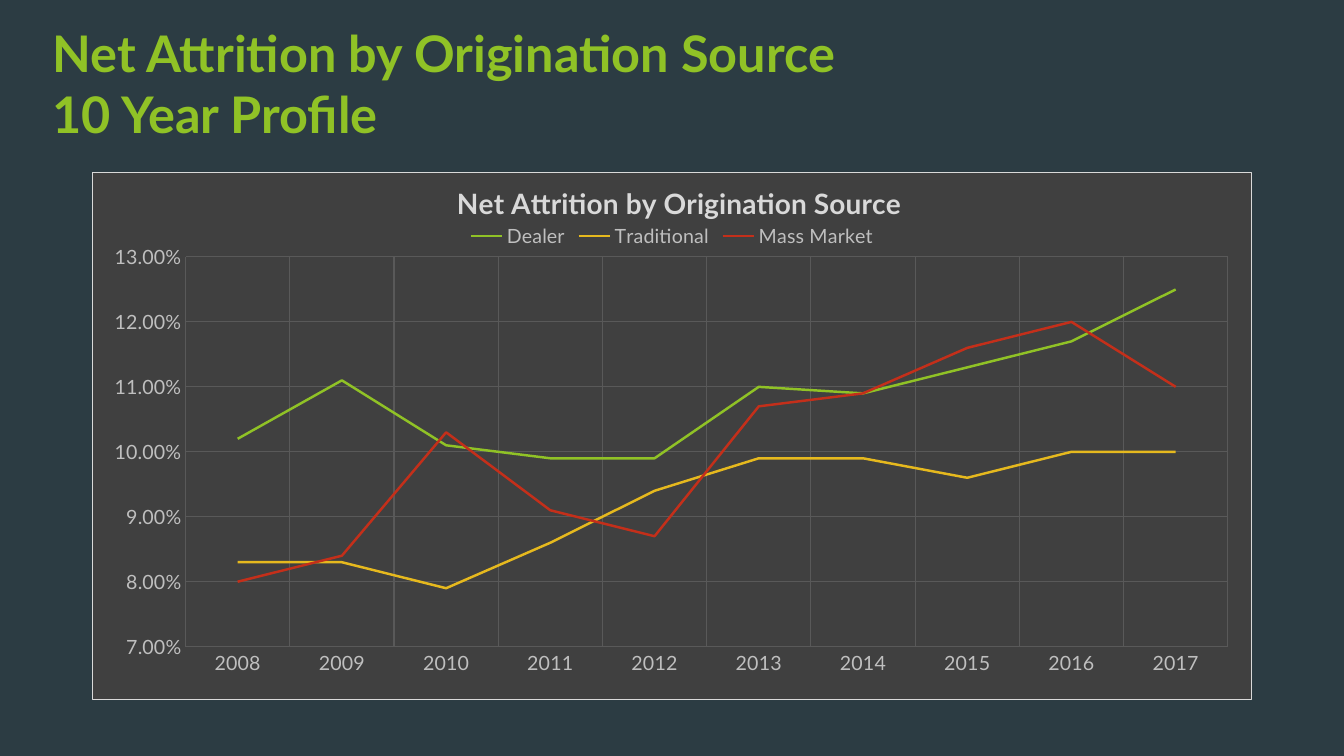
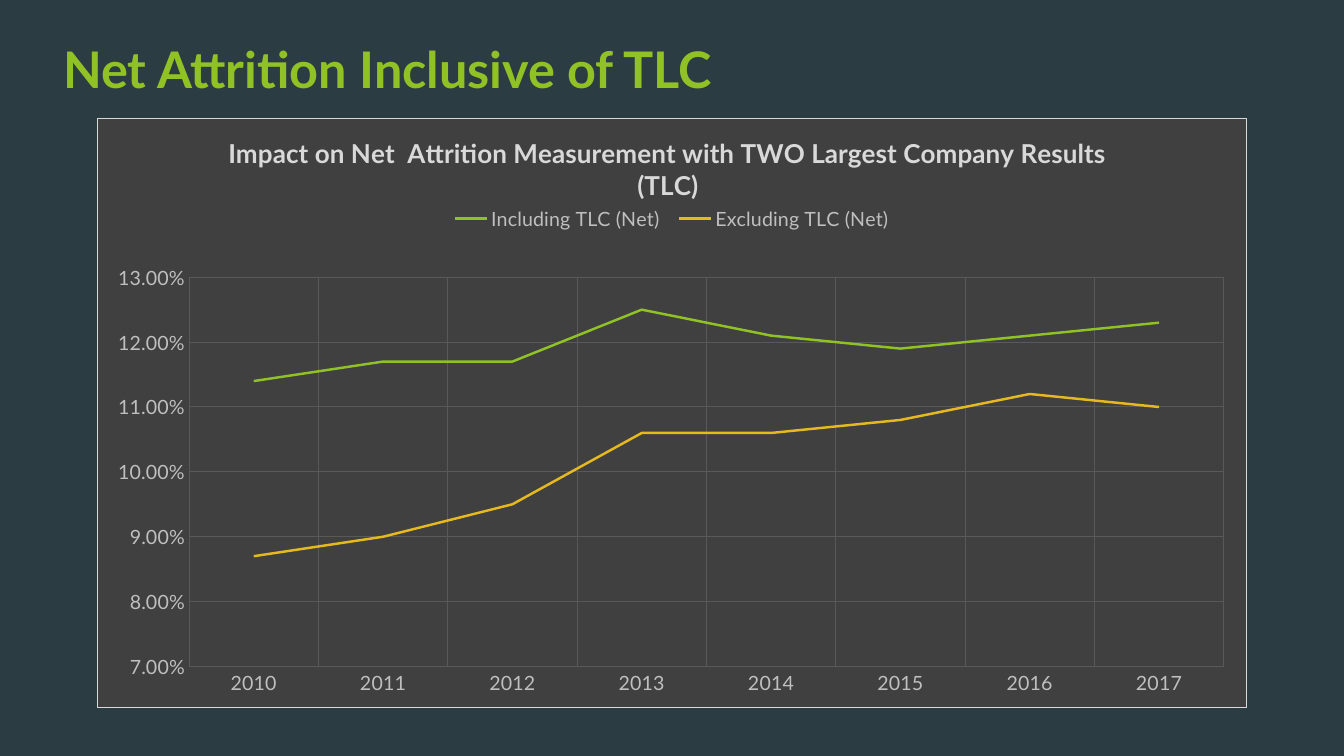
from lxml import etree
from pptx import Presentation
from pptx.chart.data import CategoryChartData
from pptx.dml.color import RGBColor
from pptx.enum.chart import (XL_CHART_TYPE, XL_LEGEND_POSITION, XL_MARKER_STYLE,
                             XL_TICK_MARK)
from pptx.enum.text import MSO_ANCHOR
from pptx.oxml import parse_xml
from pptx.oxml.ns import nsdecls, qn
from pptx.util import Pt

LINE_CHART = XL_CHART_TYPE.LINE
LEGEND_TOP = XL_LEGEND_POSITION.TOP
NO_MARKER = XL_MARKER_STYLE.NONE
NO_TICK = XL_TICK_MARK.NONE
ANCHOR_TOP = MSO_ANCHOR.TOP
FONT = "Lato"
COLORS = {
    "background": "2C3C43",
    "panel": "404040",
    "border": "D9D9D9",
    "grid": "595959",
    "label": "BFBFBF",
    "green": "90C226",
    "yellow": "E6B91E",
    "red": "C42F1A",
}
SERIES_COLORS = ("green", "yellow", "red")


def color(name):
    """Return the named colour."""
    return RGBColor.from_string(COLORS[name])


def style_font(font, size, color_name, bold=False):
    """Set the typeface, size, colour and weight of a font."""
    font.name = FONT
    font.size = Pt(size)
    font.bold = bold
    font.color.rgb = color(color_name)


def add_slide(presentation):
    """Add a blank slide with the shared background."""
    slide = presentation.slides.add_slide(presentation.slide_layouts[6])
    slide.background.fill.solid()
    slide.background.fill.fore_color.rgb = color("background")
    return slide


def add_title(slide, lines, box):
    """Add the slide title, one run for each line."""
    frame = slide.shapes.add_textbox(*map(Pt, box)).text_frame
    frame.word_wrap = True
    frame.vertical_anchor = ANCHOR_TOP
    paragraph = frame.paragraphs[0]
    for index, line in enumerate(lines):
        if index:
            paragraph.add_line_break()
        run = paragraph.add_run()
        run.text = line
        style_font(run.font, 36, "green", True)


def set_layout(element, index, fractions, inner=False):
    """Place a chart part by fractions of the chart area."""
    for old in element.findall(qn("c:layout")):
        element.remove(old)
    layout = etree.Element(qn("c:layout"))
    manual = etree.SubElement(layout, qn("c:manualLayout"))
    settings = [("layoutTarget", "inner")] if inner else []
    settings += [("xMode", "edge"), ("yMode", "edge")]
    settings += zip("xywh", map(str, fractions))
    for tag, value in settings:
        etree.SubElement(manual, qn(f"c:{tag}")).set("val", value)
    element.insert(index, layout)


def style_panel(chart):
    """Fill and outline the chart area with square corners."""
    space = chart.element
    for old in space.findall(qn("c:roundedCorners")):
        space.remove(old)
    corners = etree.Element(qn("c:roundedCorners"))
    corners.set("val", "0")
    space.find(qn("c:date1904")).addnext(corners)
    space.find(qn("c:chart")).addnext(parse_xml(
        f'<c:spPr {nsdecls("c", "a")}>'
        f'<a:solidFill><a:srgbClr val="{COLORS["panel"]}"/></a:solidFill>'
        f'<a:ln w="{Pt(0.75)}"><a:solidFill>'
        f'<a:srgbClr val="{COLORS["border"]}"/></a:solidFill></a:ln></c:spPr>'))


def style_axis(axis):
    """Show grid lines and labels without ticks or an axis line."""
    axis.major_tick_mark = NO_TICK
    axis.minor_tick_mark = NO_TICK
    axis.format.line.fill.background()
    axis.has_major_gridlines = True
    grid = axis.major_gridlines.format.line
    grid.width = Pt(0.75)
    grid.color.rgb = color("grid")
    style_font(axis.tick_labels.font, 14, "label")


def add_chart_title(chart, text, size, place):
    """Add the title inside the chart."""
    chart.has_title = True
    run = chart.chart_title.text_frame.paragraphs[0].add_run()
    run.text = text
    style_font(run.font, size, "border", True)
    chart.chart_title.include_in_layout = False
    set_layout(chart.chart_title._element, 1, place)


def add_legend(chart, place):
    """Add the legend above the plot."""
    chart.has_legend = True
    legend = chart.legend
    legend.position = LEGEND_TOP
    legend.include_in_layout = False
    style_font(legend.font, 14, "label")
    set_layout(legend._element, 1, place)


def add_line_chart(slide, box, first_year, series_values):
    """Add a styled line chart of yearly rates."""
    data = CategoryChartData(number_format="0.00%")
    count = len(next(iter(series_values.values())))
    data.categories = [str(first_year + offset) for offset in range(count)]
    for name, values in series_values.items():
        data.add_series(name, values)
    chart = slide.shapes.add_chart(LINE_CHART, *map(Pt, box), data).chart
    style_font(chart.font, 10, "label")
    style_panel(chart)
    for axis in (chart.category_axis, chart.value_axis):
        style_axis(axis)
    value_axis = chart.value_axis
    value_axis.minimum_scale, value_axis.maximum_scale = 0.07, 0.13
    value_axis.major_unit = 0.01
    value_axis.tick_labels.number_format = "0.00%"
    value_axis.tick_labels.number_format_is_linked = False
    plot = chart.plots[0]
    plot.vary_by_categories = False
    for series, color_name in zip(plot.series, SERIES_COLORS):
        series.smooth = False
        series.marker.style = NO_MARKER
        series.format.line.width = Pt(1.75)
        series.format.line.color.rgb = color(color_name)
    return chart


def set_plot(chart, place):
    """Place the inner plot area."""
    area = chart.element.find(qn("c:chart")).find(qn("c:plotArea"))
    set_layout(area, 0, place, inner=True)


def add_origination_slide(presentation):
    """Add the slide on attrition by origination source."""
    slide = add_slide(presentation)
    add_title(slide, ["Net Attrition by Origination Source", "10 Year Profile"],
              (30.5, 12.5, 914, 104))
    chart = add_line_chart(slide, (66, 123, 828, 377), 2008, {
        "Dealer": (0.102, 0.111, 0.101, 0.099, 0.099, 0.11, 0.109, 0.113, 0.117, 0.125),
        "Traditional": (0.083, 0.083, 0.079, 0.086, 0.094, 0.099, 0.099, 0.096, 0.1, 0.1),
        "Mass Market": (0.08, 0.084, 0.103, 0.091, 0.087, 0.107, 0.109, 0.116, 0.12, 0.11),
    })
    add_chart_title(chart, "Net Attrition by Origination Source", 20, (0.31, 0.01))
    add_legend(chart, (0.32, 0.09, 0.36, 0.06))
    set_plot(chart, (0.08, 0.16, 0.9, 0.74))


def add_largest_companies_slide(presentation):
    """Add the slide on the impact of the two largest companies."""
    slide = add_slide(presentation)
    add_title(slide, ["Net Attrition Inclusive of TLC"], (38, 24, 621, 78))
    chart = add_line_chart(slide, (69, 84, 822, 422), 2010, {
        "Including TLC (Net)": (0.114, 0.117, 0.117, 0.125, 0.121, 0.119, 0.121, 0.123),
        "Excluding TLC (Net)": (0.087, 0.09, 0.095, 0.106, 0.106, 0.108, 0.112, 0.11),
    })
    add_chart_title(
        chart,
        "Impact on Net  Attrition Measurement with TWO Largest Company Results (TLC)",
        18.6, (0.11, 0.02))
    add_legend(chart, (0.3, 0.14, 0.4, 0.06))
    set_plot(chart, (0.08, 0.27, 0.9, 0.66))


def main():
    """Build and save the presentation."""
    presentation = Presentation()
    presentation.slide_width = Pt(960)
    presentation.slide_height = Pt(540)
    add_origination_slide(presentation)
    add_largest_companies_slide(presentation)
    presentation.save("out.pptx")


if __name__ == "__main__":
    main()
